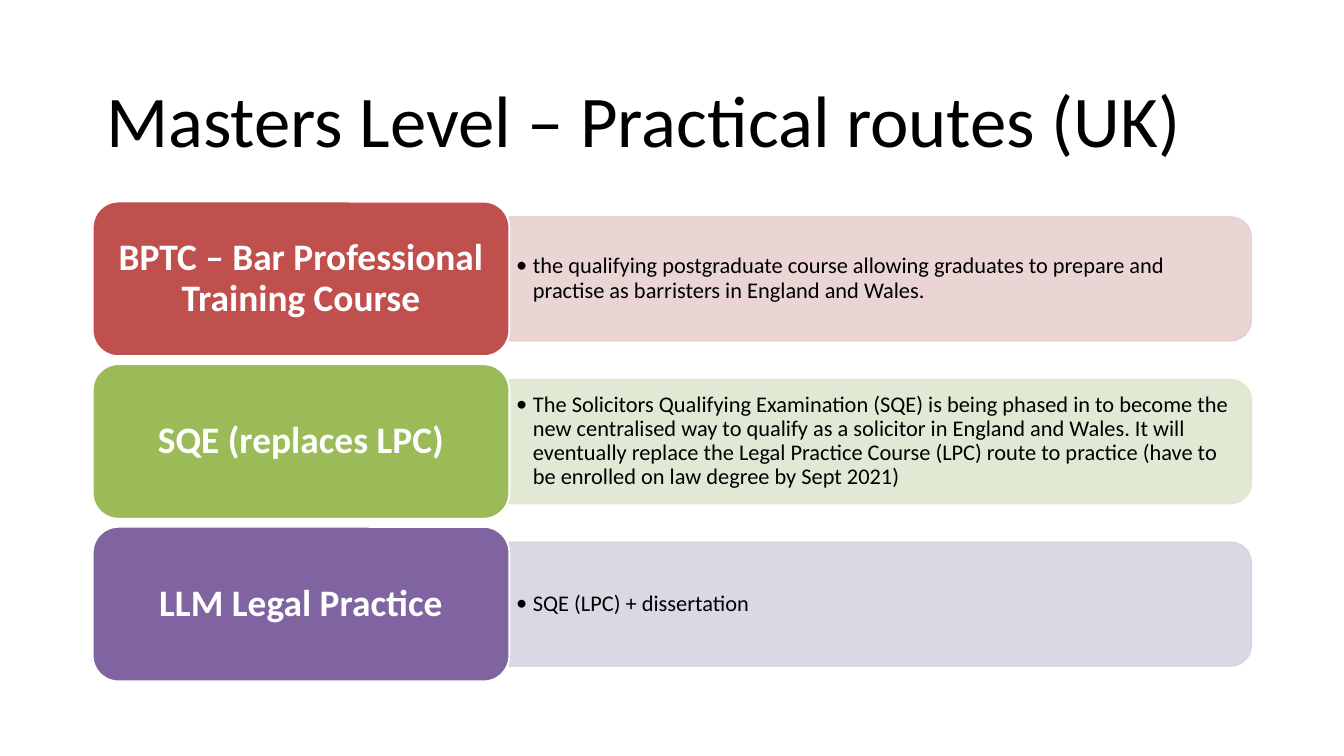
"""Build a slide of three practical masters-level law routes in the UK."""
import lxml.etree
import pptx
import pptx.dml.color
import pptx.enum.shapes
import pptx.enum.text
import pptx.oxml.ns
import pptx.util

Inches = pptx.util.Inches
Pt = pptx.util.Pt
qn = pptx.oxml.ns.qn
MSO_SHAPE = pptx.enum.shapes.MSO_SHAPE
PP_ALIGN = pptx.enum.text.PP_ALIGN


def paint(fill, color):
    fill.solid()
    fill.fore_color.rgb = pptx.dml.color.RGBColor.from_string(color)


def write(s, text, size, color="000000", bold=False, align=PP_ALIGN.LEFT,
          insets=(0.1, 0.05), bullet=False):
    tf = s.text_frame
    tf.word_wrap = True
    tf.auto_size = pptx.enum.text.MSO_AUTO_SIZE.NONE
    tf.vertical_anchor = pptx.enum.text.MSO_ANCHOR.MIDDLE
    tf.margin_left = tf.margin_right = Inches(insets[0])
    tf.margin_top = tf.margin_bottom = Inches(insets[1])
    p = tf.paragraphs[0]
    p.alignment = align
    p.line_spacing = 0.9
    if bullet:
        pPr = p._p.get_or_add_pPr()
        pPr.set("marL", str(Pt(9)))
        pPr.set("indent", str(-Pt(9)))
        lxml.etree.SubElement(pPr, qn("a:buFont")).set("typeface", "Calibri")
        lxml.etree.SubElement(pPr, qn("a:buChar")).set("char", "•")
    r = p.add_run()
    r.text = text
    r.font.name = "Calibri"
    r.font.size = Pt(size)
    r.font.bold = bold
    paint(r.font.fill, color)


prs = pptx.Presentation()
prs.slide_width = Inches(10)
prs.slide_height = prs.slide_width * 9 // 16
slide = prs.slides.add_slide(prs.slide_layouts[5])
sp = slide.shapes

left, top, pitch = 0.69, 1.5, 1.21
label_w, label_h = 3.1, 1.15
panel_w, panel_h = 5.52, 0.92
text_w, text_h = 5.48, 0.83
panel_left = left + label_w

title = sp.title
title.left, title.top = Inches(left), Inches(0.46)
title.width, title.height = Inches(8.62), Inches(0.93)
write(title, "Masters Level – Practical routes (UK)", 39)

routes = [
    ("BPTC – Bar Professional Training Course", "C0504D", "E8D0D0",
     "the qualifying postgraduate course allowing graduates to prepare and "
     "practise as barristers in England and Wales."),
    ("SQE (replaces LPC)", "9BBB59", "DEE7D1",
     "The Solicitors Qualifying Examination (SQE) is being phased in to become "
     "the new centralised way to qualify as a solicitor in England and Wales. "
     "It will eventually replace the Legal Practice Course (LPC) route to "
     "practice (have to be enrolled on law degree by Sept 2021)"),
    ("LLM Legal Practice", "8064A2", "D8D3E0", "SQE (LPC) + dissertation"),
]

for row, (name, color, tint, detail) in enumerate(routes):
    y = top + row * pitch
    middle = y + label_h / 2

    panel = sp.add_shape(
        MSO_SHAPE.ROUND_2_SAME_RECTANGLE,
        Inches(panel_left + (panel_w - panel_h) / 2), Inches(middle - panel_w / 2),
        Inches(panel_h), Inches(panel_w))
    panel.rotation = 90
    panel.shadow.inherit = False
    paint(panel.fill, tint)
    paint(panel.line.fill, tint)
    panel.line.width = Pt(1)
    for clr in panel._element.spPr.iter(qn("a:srgbClr")):
        lxml.etree.SubElement(clr, qn("a:alpha")).set("val", "90000")

    body = sp.add_textbox(Inches(panel_left), Inches(middle - text_h / 2),
                          Inches(text_w), Inches(text_h))
    write(body, detail, 12, insets=(0.05, 0.03), bullet=True)

    label = sp.add_shape(MSO_SHAPE.ROUNDED_RECTANGLE, Inches(left), Inches(y),
                         Inches(label_w), Inches(label_h))
    label.shadow.inherit = False
    paint(label.fill, color)
    paint(label.line.fill, "FFFFFF")
    label.line.width = Pt(1)
    write(label, name, 20, color="FFFFFF", bold=True, align=PP_ALIGN.CENTER,
          insets=(0.08, 0.04))

prs.save("out.pptx")
